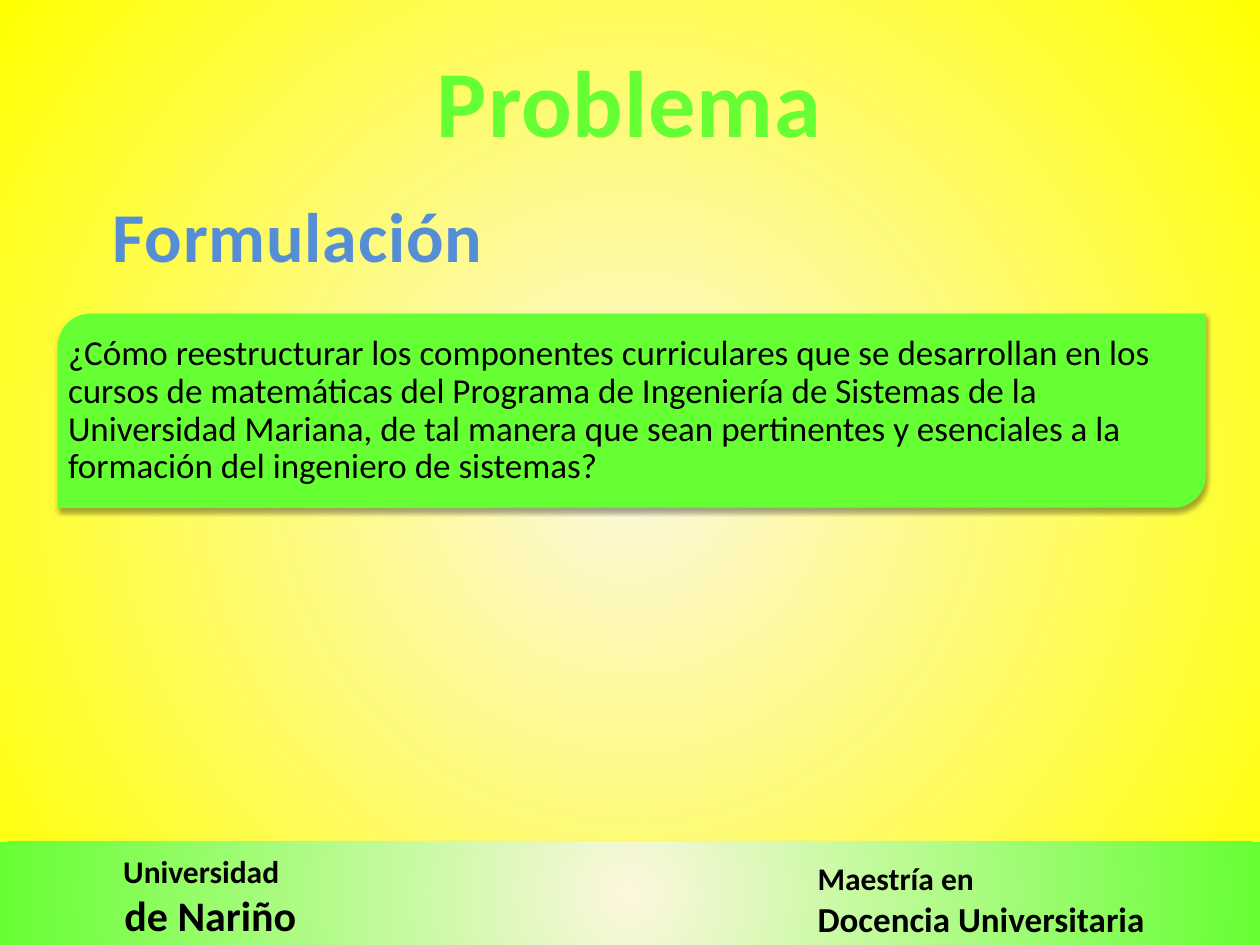
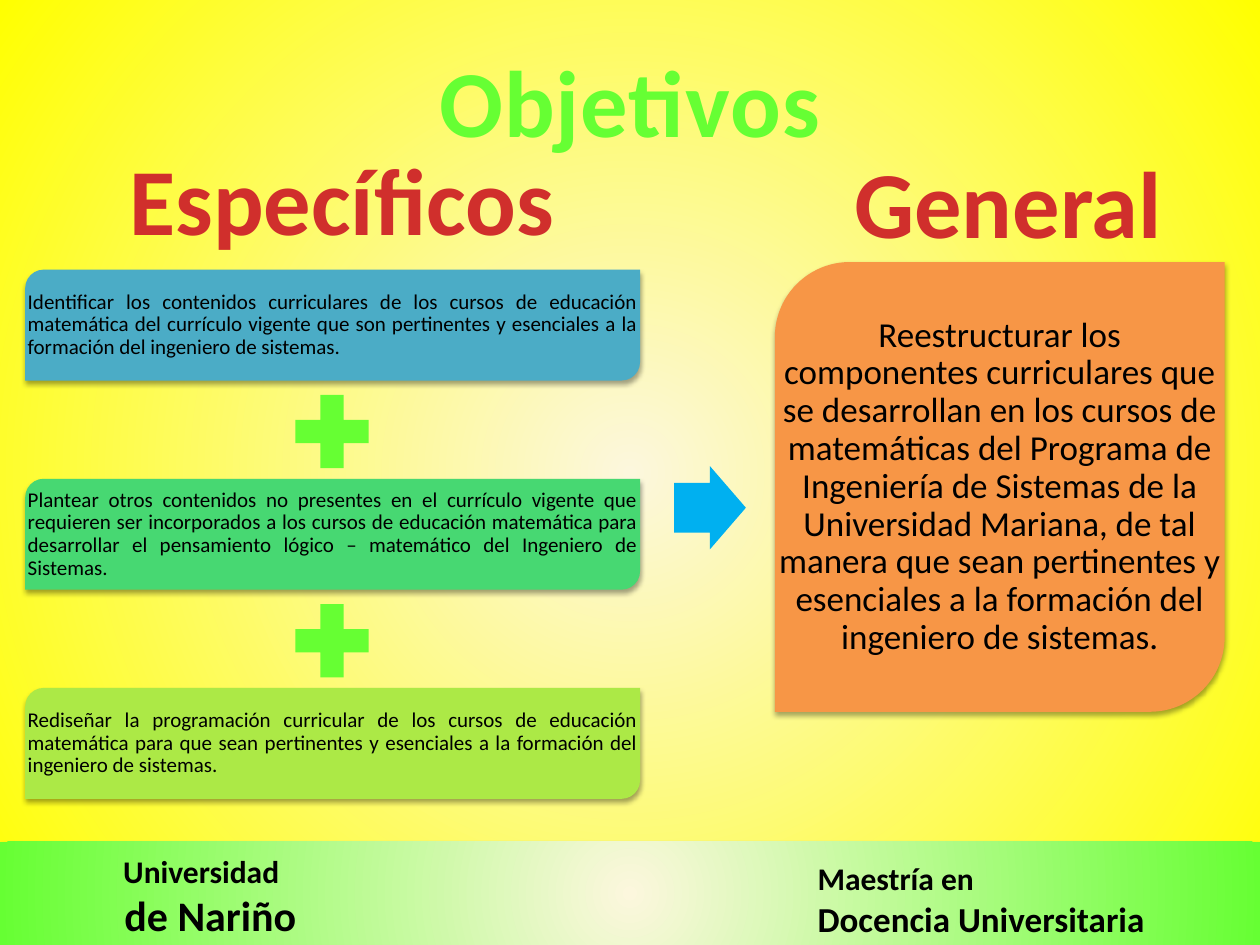
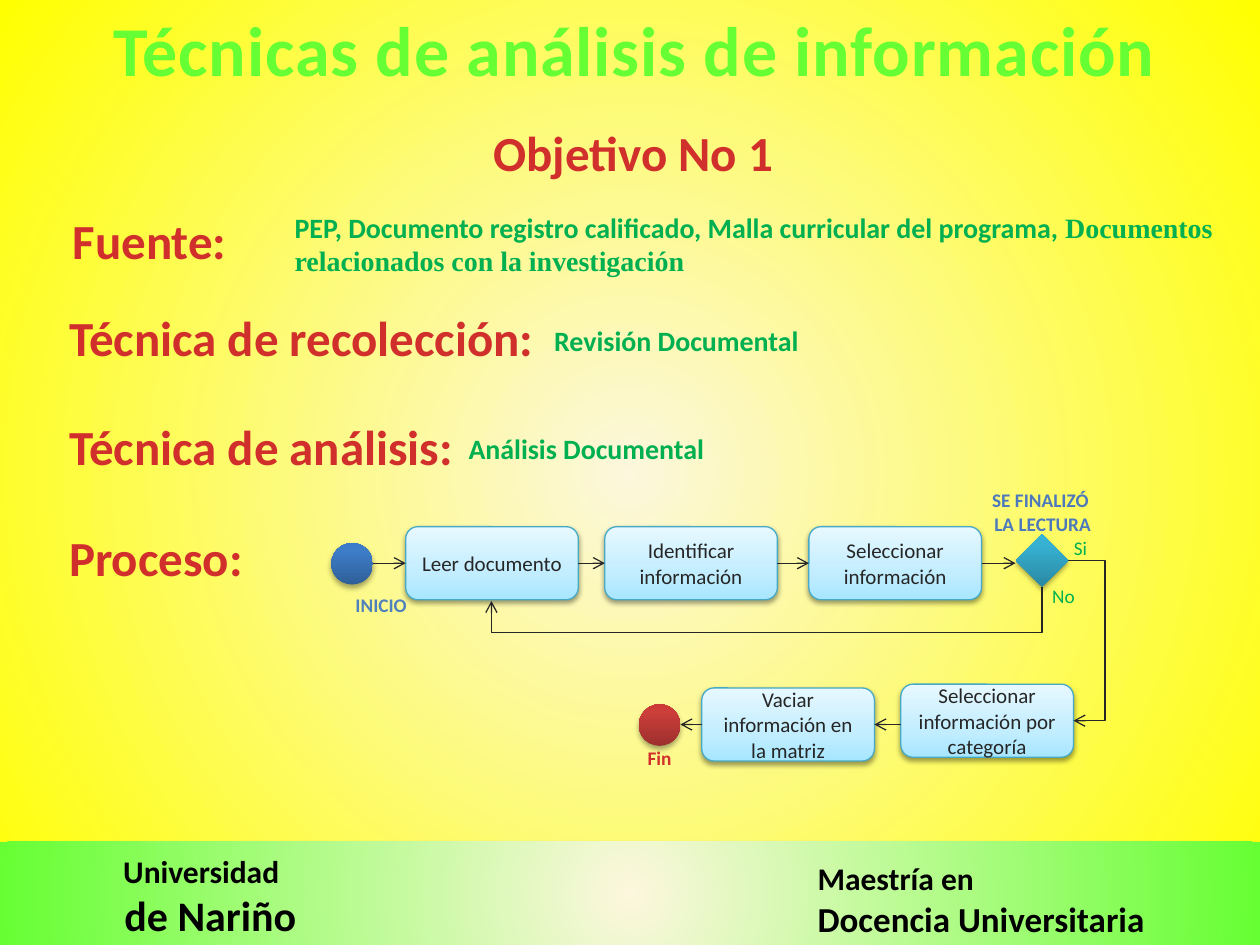
"""Build three thesis slides: problem, objectives and analysis techniques."""
from pptx import Presentation
from pptx import util as u
from pptx.dml.color import RGBColor
from pptx.enum import shapes, text
from pptx.oxml import parse_xml
from pptx.oxml.ns import nsdecls, qn

FORM = shapes.MSO_SHAPE
LINK = shapes.MSO_CONNECTOR
SIDE = text.PP_ALIGN
HOLD = text.MSO_ANCHOR
LIME, RED, GREEN, INK, BLACK = "66FF33", "D02F2C", "00B050", "262626", "000000"
PALE = "FCF7DD"
ICE = [(0, "A7E6FF"), (35, "C1EDFF"), (100, "E7F8FF")]
BLUE = [(0, "2F5F99"), (80, "3D7CC7"), (100, "3A7CCB")]
ROSE = [(0, "9C2F2D"), (80, "CB3E3A"), (100, "CE3B37")]
TEAL = [(0, "2A88A2"), (80, "37B1D2"), (100, "34B4D6")]


def rgb(code):
    return RGBColor.from_string(code)


def put(item, **vals):
    for key, val in vals.items():
        setattr(item, key, val)


def blend(root, fill, stops, radial=False):
    fill.solid()
    old = next(root.iter(qn("a:solidFill")))
    marks = "".join(f'<a:gs pos="{pos * 1000}"><a:srgbClr val="{code}"/></a:gs>'
                    for pos, code in stops)
    way = ('<a:path path="circle"><a:fillToRect l="50000" t="50000" r="50000" b="50000"/></a:path>'
           if radial else '<a:lin ang="16200000" scaled="0"/>')
    new = parse_xml(f'<a:gradFill {nsdecls("a")} rotWithShape="1">'
                    f'<a:gsLst>{marks}</a:gsLst>{way}</a:gradFill>')
    old.getparent().replace(old, new)


def space(item):
    for look in item.element.iter(qn("a:rPr")):
        look.set("spc", "50")


class Deck:
    def __init__(self):
        self.prs = Presentation()
        put(self.prs, slide_width=u.Inches(10), slide_height=u.Inches(7.5))
        base = self.prs.slide_master
        blend(base.element, base.background.fill, [(0, PALE), (100, "FFFF00")], True)

    def page(self, title, box, size):
        self.slide = self.prs.slides.add_slide(self.prs.slide_layouts[5])
        band = self.shape(FORM.RECTANGLE, (0, 6.68, 10, 0.82), LIME, shade=35)
        blend(band.element, band.fill, [(0, PALE), (100, LIME)], True)
        left = self.label([[("Universidad", {})], [("de Nariño", {"size": 24})]],
                          (0.88, 6.71, 1.57, 0.81), 18, BLACK, bold=True)
        left.text_frame.paragraphs[1].alignment = SIDE.RIGHT
        self.label([[("Maestría en", {})], [("Docencia Universitaria", {"size": 20})]],
                   (6.39, 6.77, 2.91, 0.74), 18, BLACK, bold=True)
        head = self.slide.shapes.title
        put(head, **dict(zip(("left", "top", "width", "height"), map(u.Inches, box))))
        self.words(head.text_frame, title, size, LIME, bold=True, side=SIDE.CENTER, wrap=False)
        space(head)

    def words(self, frame, words, size, color, bold=False, side=SIDE.LEFT, wrap=True,
              hold=HOLD.TOP, pad=None, lead=None):
        put(frame, word_wrap=wrap, vertical_anchor=hold, auto_size=text.MSO_AUTO_SIZE.NONE)
        if pad is not None:
            put(frame, **{f"margin_{edge}": u.Inches(pad)
                          for edge in ("left", "top", "right", "bottom")})
        paras = [[(words, {})]] if isinstance(words, str) else words
        for num, runs in enumerate(paras):
            para = frame.add_paragraph() if num else frame.paragraphs[0]
            put(para, alignment=side, line_spacing=lead)
            for part, look in runs:
                run = para.add_run()
                run.text = part
                put(run.font, bold=bold, name=look.get("name", "Calibri"),
                    size=u.Pt(look.get("size", size)))
                run.font.color.rgb = rgb(color)

    def label(self, words, box, size, color, **look):
        item = self.slide.shapes.add_textbox(*map(u.Inches, box))
        self.words(item.text_frame, words, size, color, **look)
        return item

    def tag(self, words, box, size, color, bold=True):
        return self.label(words, box, size, color, bold=bold, side=SIDE.CENTER, wrap=False)

    def shape(self, form, box, fill, shade=None):
        item = self.slide.shapes.add_shape(form, *map(u.Inches, box))
        item.shadow.inherit = False
        item.line.fill.background()
        if isinstance(fill, str):
            item.fill.solid()
            item.fill.fore_color.rgb = rgb(fill)
        else:
            blend(item.element, item.fill, fill)
        if shade:
            item.element.spPr.find(qn("a:effectLst")).append(parse_xml(
                f'<a:outerShdw {nsdecls("a")} blurRad="39370" dist="22860" dir="5400000" '
                f'rotWithShape="0"><a:srgbClr val="{BLACK}"><a:alpha val="{shade * 1000}"/>'
                '</a:srgbClr></a:outerShdw>'))
        return item

    def card(self, words, box, fill, size, side, pad):
        self.shape(FORM.ROUND_2_DIAG_RECTANGLE, box, fill, 35)
        self.label(words, box, size, BLACK, side=side, hold=HOLD.MIDDLE, pad=pad, lead=0.9)

    def step(self, words, left, top):
        item = self.shape(FORM.ROUNDED_RECTANGLE, (left, top, 1.37, 0.58), ICE, 38)
        item.line.color.rgb = rgb("46AAC5")
        item.line.width = u.Pt(0.75)
        self.words(item.text_frame, words, 12, INK, side=SIDE.CENTER, hold=HOLD.MIDDLE)
        return item

    def arrow(self, ends, start=None, end=None, kind=LINK.STRAIGHT):
        item = self.slide.shapes.add_connector(kind, *map(u.Inches, ends))
        if start:
            item.begin_connect(*start)
        if end:
            item.end_connect(*end)
        item.line.color.rgb = rgb(INK)
        item.line.width = u.Pt(0.75)
        props = item.element.spPr
        props.find(qn("a:ln")).append(parse_xml(f'<a:tailEnd {nsdecls("a")} type="arrow"/>'))
        props.append(parse_xml(f'<a:effectLst {nsdecls("a")}/>'))
        return item

    def elbow(self, ends, bend, turn=0):
        props = self.arrow(ends, kind=LINK.ELBOW).element.spPr
        props.find(qn("a:xfrm")).set("rot", str(turn * 60000))
        geom = props.find(qn("a:prstGeom"))
        for old in geom.findall(qn("a:avLst")):
            geom.remove(old)
        geom.append(parse_xml(f'<a:avLst {nsdecls("a")}><a:gd name="adj1" '
                              f'fmla="val {round(bend * 100000)}"/></a:avLst>'))


def problem(deck):
    deck.page("Problema", (3.35, 0.29, 3.29, 1.01), 54)
    space(deck.label("Formulación ", (0.35, 1.48, 4.16, 0.77), 40, "558ED5",
                     bold=True, side=SIDE.CENTER))
    deck.card("¿Cómo reestructurar los componentes curriculares que se desarrollan en los cursos "
              "de matemáticas del Programa de Ingeniería de Sistemas de la Universidad Mariana, "
              "de tal manera que sean pertinentes y esenciales a la formación del ingeniero "
              "de sistemas?", (0.46, 2.49, 9.11, 1.54), LIME, 20, SIDE.LEFT, 0.08)


def goals(deck):
    deck.page("Objetivos", (3.37, 0.29, 3.26, 1.01), 54)
    aims = [
        ("4BACC6", "Identificar los contenidos curriculares de los cursos de educación matemática "
         "del currículo vigente que son pertinentes y esenciales a la formación del ingeniero "
         "de sistemas."),
        ("47D872", "Plantear otros contenidos no presentes en el currículo vigente que requieren "
         "ser incorporados a los cursos de educación matemática para desarrollar el pensamiento "
         "lógico – matemático del Ingeniero de Sistemas."),
        ("ACE946", "Rediseñar la programación curricular de los cursos de educación matemática "
         "para que sean pertinentes y esenciales a la formación del ingeniero de sistemas."),
    ]
    for num, (fill, words) in enumerate(aims):
        top = 2.14 + 1.66 * num
        if num:
            deck.shape(FORM.MATH_PLUS, (2.24, top - 0.77, 0.79, 0.79), LIME)
        deck.card(words, (0.2, top, 4.88, 0.88), fill, 12, SIDE.JUSTIFY, 0.02)
    point = deck.shape(FORM.RIGHT_ARROW, (5.35, 3.7, 0.57, 0.66), "00B0F0")
    point.adjustments[0] = 0.6
    deck.card("Reestructurar los componentes curriculares que se desarrollan en los cursos de "
              "matemáticas del Programa de Ingeniería de Sistemas de la Universidad Mariana, de "
              "tal manera que sean pertinentes y esenciales a la formación del ingeniero "
              "de sistemas.", (6.15, 2.08, 3.57, 3.57), "F79646", 20, SIDE.CENTER, 0.03)
    deck.tag("Específicos", (0.91, 1.07, 3.61, 1.01), 54, RED)
    deck.tag("General", (6.67, 1.09, 2.66, 1.01), 54, RED)


def methods(deck):
    deck.page("Técnicas de análisis de información ", (0.75, 0, 8.71, 0.77), 40)
    deck.tag("Objetivo No 1", (3.8, 0.92, 2.45, 0.57), 28, RED)
    for words, left, top, wide in [("Fuente:", 0.48, 1.62, 1.6),
                                   ("Técnica de recolección:", 0.45, 2.39, 4),
                                   ("Técnica de análisis:", 0.45, 3.26, 3.4),
                                   ("Proceso:", 0.45, 4.14, 1.7)]:
        deck.label(words, (left, top, wide, 0.57), 28, RED, bold=True)
    source = [[("PEP, Documento registro calificado, Malla curricular del programa, ", {}),
               ("Documentos relacionados con la investigación", {"name": "Times New Roman"})]]
    for words, box in [(source, (2.24, 1.62, 7.56, 0.64)),
                       ("Revisión Documental", (4.3, 2.52, 4.88, 0.37)),
                       ("Análisis Documental", (3.62, 3.38, 4.88, 0.37))]:
        deck.label(words, box, 16, GREEN, bold=True)

    deck.shape(FORM.OVAL, (2.63, 4.31, 0.33, 0.33), BLUE, 35)
    deck.shape(FORM.OVAL, (5.07, 5.59, 0.33, 0.33), ROSE, 35)
    deck.shape(FORM.DIAMOND, (8.06, 4.24, 0.42, 0.42), TEAL, 35)
    read = deck.step("Leer documento", 3.22, 4.18)
    find = deck.step("Identificar información", 4.8, 4.18)
    pick = deck.step("Seleccionar información", 6.42, 4.18)
    dump = deck.step("Vaciar información en la matriz", 5.57, 5.46)
    deck.step("Seleccionar información por categoría", 7.15, 5.43)

    deck.arrow((2.96, 4.47, 3.22, 4.47), end=(read, 1))
    deck.arrow((4.59, 4.47, 4.8, 4.47), (read, 3), (find, 1))
    deck.arrow((6.17, 4.47, 6.42, 4.47), (find, 3), (pick, 1))
    deck.arrow((7.79, 4.47, 8.06, 4.47), (pick, 3))
    deck.arrow((7.15, 5.75, 6.94, 5.75), end=(dump, 3))
    deck.arrow((5.57, 5.75, 5.4, 5.75), (dump, 1))
    deck.elbow((6.03, 2.53, 6.14, 6.9), 3.3, 90)
    deck.elbow((8.48, 4.45, 8.52, 5.72), 7.25)

    deck.tag("No", (8.25, 4.59, 0.38, 0.29), 11, GREEN, False)
    deck.tag("Si", (8.42, 4.21, 0.31, 0.29), 11, GREEN, False)
    deck.tag([[("SE FINALIZÓ ", {})], [("LA LECTURA", {})]],
             (7.77, 3.83, 1.01, 0.47), 11, "4D79BC")
    deck.tag("INICIO", (2.72, 4.66, 0.61, 0.29), 11, "4F81BD")
    deck.tag("Fin", (5.04, 5.87, 0.39, 0.29), 11, RED)


def main():
    deck = Deck()
    for build in (problem, goals, methods):
        build(deck)
    deck.prs.save("out.pptx")


if __name__ == "__main__":
    main()
